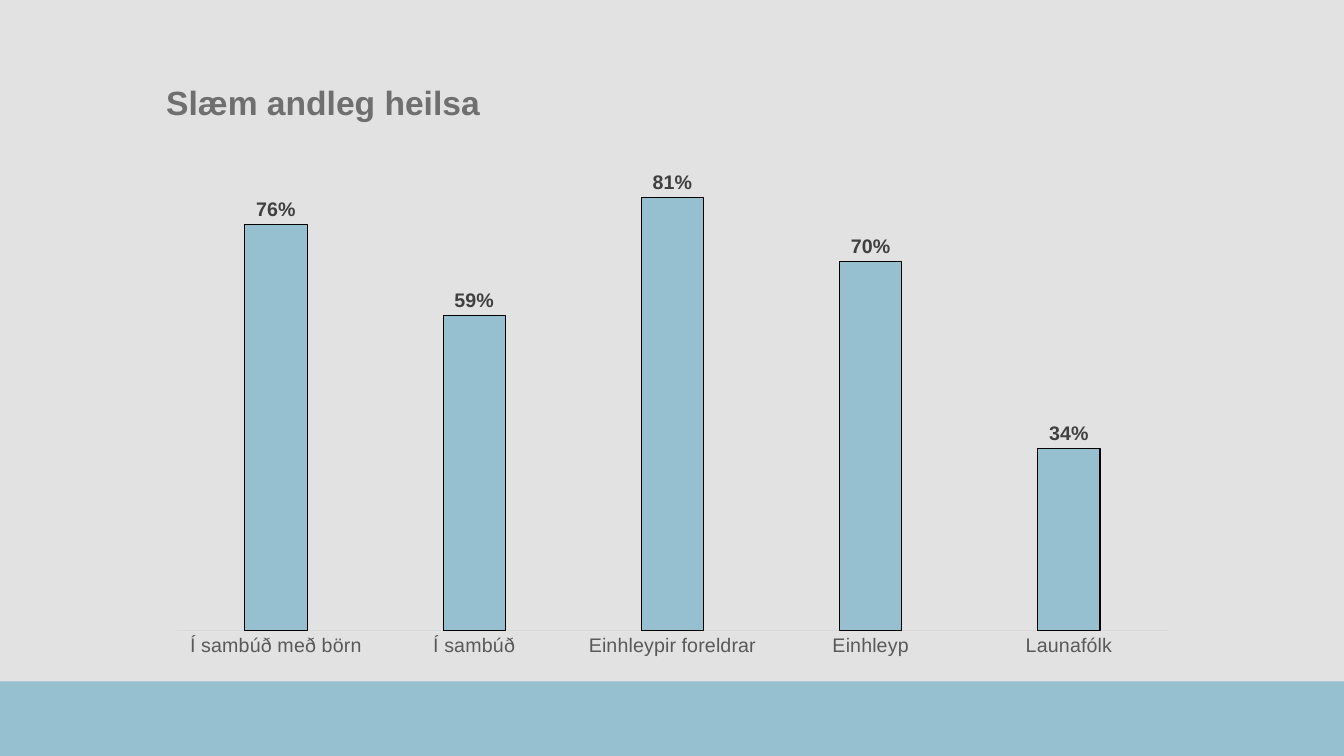
from pptx import Presentation
from pptx.chart.data import CategoryChartData
from pptx.dml.color import RGBColor
from pptx.enum.chart import XL_CHART_TYPE as ChartType, XL_LABEL_POSITION as LabelPos, XL_TICK_MARK as Tick
from pptx.enum.shapes import MSO_SHAPE as Shape
from pptx.enum.text import MSO_ANCHOR as Anchor
from pptx.util import Inches, Pt

FONT = "Arial"
BLUE = "96C0CF"
SHARES = {
    "Í sambúð með börn": 0.76,
    "Í sambúð": 0.59,
    "Einhleypir foreldrar": 0.81,
    "Einhleyp": 0.69,
    "Launafólk": 0.34,
}
LABEL_OVERRIDES = {"Einhleyp": "70%"}


def rgb(hex_color):
    return RGBColor.from_string(hex_color)


def style_font(font, size, color, bold=False):
    font.name = FONT
    font.size = Pt(size)
    font.bold = bold
    font.color.rgb = rgb(color)


def write_text(frame, text, *, size, color, bold=False, line_spacing=None):
    paragraph = frame.paragraphs[0]
    paragraph.line_spacing = line_spacing
    run = paragraph.add_run()
    run.text = text
    style_font(run.font, size, color, bold)


def add_footer_band(slide, left, top, width, height):
    band = slide.shapes.add_shape(
        Shape.RECTANGLE, Inches(left), Inches(top), Inches(width), Inches(height))
    band.shadow.inherit = False
    band.fill.solid()
    band.fill.fore_color.rgb = rgb(BLUE)
    band.line.fill.background()


def add_title(slide, left, top, width, height):
    title = slide.shapes.add_textbox(
        Inches(left), Inches(top), Inches(width), Inches(height))
    frame = title.text_frame
    frame.word_wrap = True
    frame.vertical_anchor = Anchor.MIDDLE
    write_text(frame, "Slæm andleg heilsa", size=24, color="706F6F",
               bold=True, line_spacing=0.9)


def add_share_chart(slide, left, top, width, height):
    data = CategoryChartData(number_format="0%")
    data.categories = list(SHARES)
    data.add_series("Series 1", list(SHARES.values()))
    chart = slide.shapes.add_chart(
        ChartType.COLUMN_CLUSTERED, Inches(left), Inches(top),
        Inches(width), Inches(height), data).chart
    style_font(chart.font, 10, "000000")
    chart.has_legend = False
    chart.has_title = False

    group_axis = chart.category_axis
    group_axis.major_tick_mark = Tick.NONE
    group_axis.format.line.color.rgb = rgb("D9D9D9")
    group_axis.format.line.width = Pt(0.75)
    style_font(group_axis.tick_labels.font, 14, "595959")

    share_axis = chart.value_axis
    share_axis.minimum_scale, share_axis.maximum_scale = 0, 0.9
    share_axis.has_major_gridlines = False
    share_axis.visible = False

    plot = chart.plots[0]
    plot.gap_width, plot.overlap = 219, -27
    plot.vary_by_categories = False

    shares = plot.series[0]
    shares.format.fill.solid()
    shares.format.fill.fore_color.rgb = rgb(BLUE)
    shares.format.line.color.rgb = rgb("000000")
    shares.format.line.width = Pt(0.75)

    labels = shares.data_labels
    labels.show_value = True
    labels.position = LabelPos.OUTSIDE_END
    labels.number_format = "0%"
    labels.number_format_is_linked = False
    style_font(labels.font, 14, "404040", bold=True)
    for index, group in enumerate(SHARES):
        if group in LABEL_OVERRIDES:
            label = shares.points[index].data_label
            write_text(label.text_frame, LABEL_OVERRIDES[group],
                       size=14, color="404040", bold=True)
            label.position = LabelPos.OUTSIDE_END


def main():
    prs = Presentation()
    prs.slide_width, prs.slide_height = Inches(13.33), Inches(7.5)
    slide = prs.slides.add_slide(prs.slide_layouts[6])
    slide.background.fill.solid()
    slide.background.fill.fore_color.rgb = rgb("E2E2E2")
    add_footer_band(slide, 0, 6.76, 13.33, 0.74)
    add_title(slide, 1.55, 0.7, 10.24, 0.68)
    add_share_chart(slide, 1.55, 1.38, 10.24, 5.24)
    prs.save("out.pptx")


if __name__ == "__main__":
    main()
